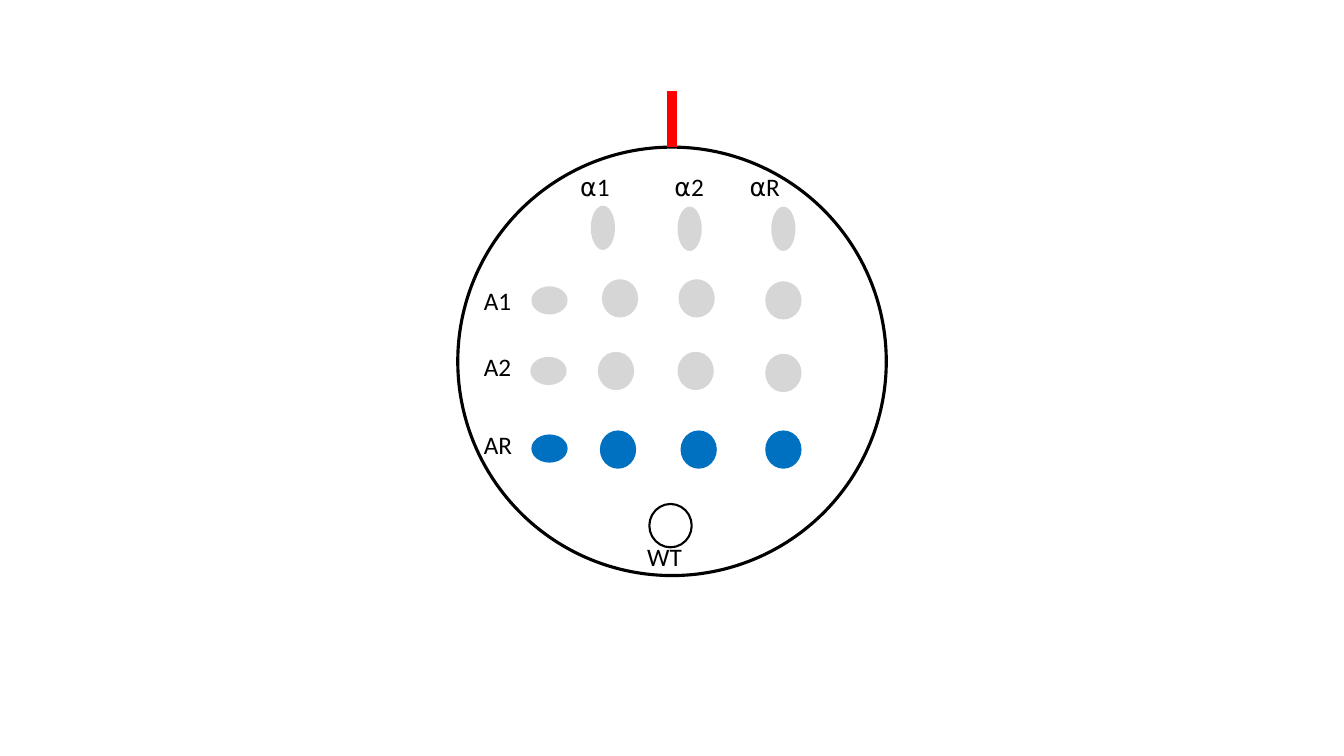
from dataclasses import dataclass

from lxml import etree
from pptx import Presentation, util as u
from pptx.dml import color
from pptx.enum import shapes, text
from pptx.oxml import ns

BLACK, BLUE, RED = "000000", "0070C0", "FF0000"
FAINT = 16  # opacity of the pale spots, percent


@dataclass
class Oval:
    left: float
    top: float
    wide: float
    high: float
    fill: str = ""
    alpha: int = 100
    line: float = 0
    turn: int = 0


@dataclass
class Label:
    words: str
    left: float
    top: float
    wide: float
    align: text.PP_ALIGN = text.PP_ALIGN.LEFT


@dataclass
class Row:
    """One row of the dish: a flat spot, then three round ones."""
    flat: tuple[float, float]
    rounds: list[tuple[float, float]]
    fill: str = BLACK
    alpha: int = FAINT


DISH = Oval(4.54, 1.46, 4.25, 4.25, line=2.25)
WELL = Oval(6.44, 5, 0.42, 0.43, line=1.5)
HEADS = [(5.86, 2.04), (6.72, 2.05), (7.65, 2.05)]
ROWS = [
    Row((5.31, 2.8), [(5.97, 2.77), (6.73, 2.77), (7.59, 2.79)]),
    Row((5.3, 3.5), [(5.93, 3.49), (6.72, 3.49), (7.59, 3.51)]),
    Row((5.31, 4.27), [(5.95, 4.27), (6.75, 4.27), (7.59, 4.27)], BLUE, 100),
]
MID = text.PP_ALIGN.CENTER
LABELS = [
    Label("⍺1", 5.55, 1.65, 0.7, MID),
    Label("⍺2", 6.42, 1.65, 0.83, MID),
    Label("⍺R", 7.17, 1.65, 0.83, MID),
    Label("A1", 4.7, 2.78, 0.75),
    Label("A2", 4.7, 3.44, 0.75),
    Label("AR", 4.7, 4.21, 0.75),
    Label("WT", 6.32, 5.32, 0.75),
]
FRAME = {"word_wrap": True, "auto_size": text.MSO_AUTO_SIZE.SHAPE_TO_FIT_TEXT}
FONT = {"name": "Calibri", "size": u.Pt(18)}


def paint(part, tint: str) -> None:
    """Give a fill or a font one plain colour."""
    if hasattr(part, "solid"):
        part.solid()
        part.fore_color.rgb = color.RGBColor.from_string(tint)
    else:
        part.color.rgb = color.RGBColor.from_string(tint)


def assign(part, values: dict) -> None:
    for name, value in values.items():
        setattr(part, name, value)


def draw_oval(group, oval: Oval):
    box = map(u.Inches, (oval.left, oval.top, oval.wide, oval.high))
    shape = group.shapes.add_shape(shapes.MSO_SHAPE.OVAL, *box)
    shape.shadow.inherit = False
    shape.rotation = oval.turn
    if oval.fill:
        paint(shape.fill, oval.fill)
    else:
        shape.fill.background()
    if oval.alpha < 100:
        tint = shape.fill._xPr.find(".//" + ns.qn("a:srgbClr"))
        etree.SubElement(tint, ns.qn("a:alpha"), val=str(oval.alpha * 1000))
    if oval.line:
        paint(shape.line.fill, BLACK)
        shape.line.width = u.Pt(oval.line)
    else:
        shape.line.fill.background()
    return shape


def draw_label(group, label: Label) -> None:
    box = map(u.Inches, (label.left, label.top, label.wide, 0.49))
    frame = group.shapes.add_textbox(*box).text_frame
    assign(frame, FRAME)
    para = frame.paragraphs[0]
    para.alignment = label.align
    run = para.add_run()
    run.text = label.words
    assign(run.font, FONT)
    paint(run.font.fill, BLACK)


def draw_mark(group, dish) -> None:
    """Draw the red bar that stands on top of the dish."""
    mid = DISH.left + DISH.wide / 2
    ends = map(u.Inches, (mid, 0.9, mid, DISH.top))
    mark = group.shapes.add_connector(shapes.MSO_CONNECTOR.STRAIGHT, *ends)
    mark.end_connect(dish, 0)
    paint(mark.line.fill, RED)
    mark.line.width = u.Pt(7.75)
    etree.SubElement(mark._element.spPr, ns.qn("a:effectLst"))


def main() -> None:
    deck = Presentation()
    assign(deck, {"slide_width": u.Inches(13.33), "slide_height": u.Inches(7.5)})
    slide = deck.slides.add_slide(deck.slide_layouts[6])
    group = slide.shapes.add_group_shape()

    dish = draw_oval(group, DISH)
    spots = [Oval(*at, 0.24, 0.44, BLACK, FAINT) for at in HEADS]
    for row in ROWS:
        spots.append(Oval(*row.flat, 0.28, 0.36, row.fill, row.alpha, turn=90))
        spots += [Oval(*at, 0.36, 0.38, row.fill, row.alpha) for at in row.rounds]
    for oval in [*spots, WELL]:
        draw_oval(group, oval)
    for label in LABELS:
        draw_label(group, label)
    draw_mark(group, dish)
    deck.save("out.pptx")


if __name__ == "__main__":
    main()
